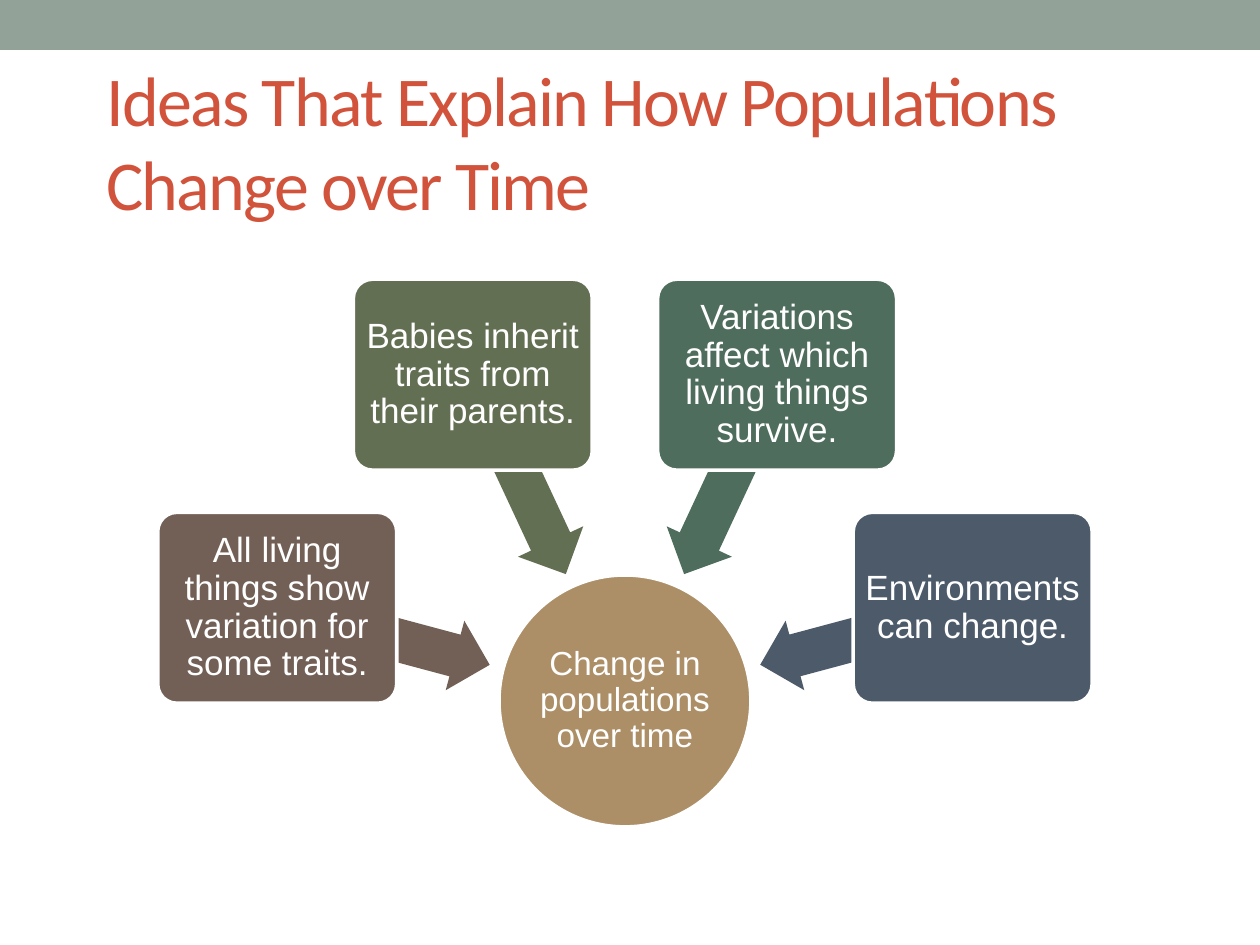
from math import cos, radians, sin

from pptx import Presentation
from pptx.dml.color import RGBColor
from pptx.enum.shapes import MSO_SHAPE as Shape
from pptx.enum.text import MSO_ANCHOR as Anchor, PP_ALIGN as Align
from pptx.util import Pt

PX = 914400 / 126
HUB = (625, 701)
CARDS = [
    (195, "726056", "All living things show variation for some traits."),
    (245, "636F53", "Babies inherit traits from their parents."),
    (295, "4F6D5D", "Variations affect which living things survive."),
    (345, "4C5A6A", "Environments can change."),
]


def px(*nums):
    return [round(num * PX) for num in nums]


def paint(target, tone):
    target.solid()
    target.fore_color.rgb = RGBColor.from_string(tone)


def add_shape(slide, kind, box, tone, edge=None):
    shape = slide.shapes.add_shape(kind, *px(*box))
    shape.shadow.inherit = False
    paint(shape.fill, tone)
    if edge:
        paint(shape.line.fill, edge)
        shape.line.width = Pt(2.08)
    else:
        shape.line.fill.background()
    return shape


def set_font(para, name, size, tone):
    para.font.name = name
    para.font.size = Pt(size)
    paint(para.font.fill, tone)


def add_label(shape, text, size, inset):
    frame = shape.text_frame
    frame.word_wrap = True
    frame.vertical_anchor = Anchor.MIDDLE
    frame.margin_left = frame.margin_right = px(inset)[0]
    frame.margin_top = frame.margin_bottom = px(inset)[0]
    para = frame.paragraphs[0]
    para.text = text
    para.alignment = Align.CENTER
    para.line_spacing = 0.9
    set_font(para, "Arial", size, "FFFFFF")


def around(hub, angle, reach, width, height):
    """Box whose centre lies at an angle and distance from the hub."""
    turn = radians(angle)
    mid_x = hub[0] + reach * cos(turn)
    mid_y = hub[1] + reach * sin(turn)
    return mid_x - width / 2, mid_y - height / 2, width, height


def add_title(slide, box, text):
    frame = slide.shapes.add_textbox(*px(*box)).text_frame
    frame.word_wrap = True
    frame.vertical_anchor = Anchor.MIDDLE
    para = frame.paragraphs[0]
    run = para.add_run()
    run.text = text
    set_font(para, "Calibri", 40, "D2533C")
    run.font._element.set("spc", "-100")


def add_wheel(slide, hub, cards):
    """Central circle with cards on an arc, each pointing inward."""
    disc = add_shape(slide, Shape.OVAL, around(hub, 0, 0, 252, 252),
                     "AD8F67", "FFFFFF")
    add_label(disc, "Change in populations over time", 19, 1)
    for angle, tone, text in cards:
        arrow = add_shape(slide, Shape.LEFT_ARROW,
                          around(hub, angle, 250, 220, 72), tone)
        arrow.adjustments[0] = 0.6
        arrow.adjustments[1] = 0.5
        arrow.rotation = angle
        card = add_shape(slide, Shape.ROUNDED_RECTANGLE,
                         around(hub, angle, 360, 239, 191), tone, "FFFFFF")
        card.adjustments[0] = 0.1
        add_label(card, text, 20, 5)


def main():
    deck = Presentation()
    deck.slide_width, deck.slide_height = px(1260, 945)
    slide = deck.slides.add_slide(deck.slide_layouts[6])
    add_shape(slide, Shape.RECTANGLE, (0, 0, 1260, 50), "93A299")
    add_title(slide, (94, 73, 1103, 136),
              "Ideas That Explain How Populations Change over Time")
    add_wheel(slide, HUB, CARDS)
    deck.save("out.pptx")


if __name__ == "__main__":
    main()
